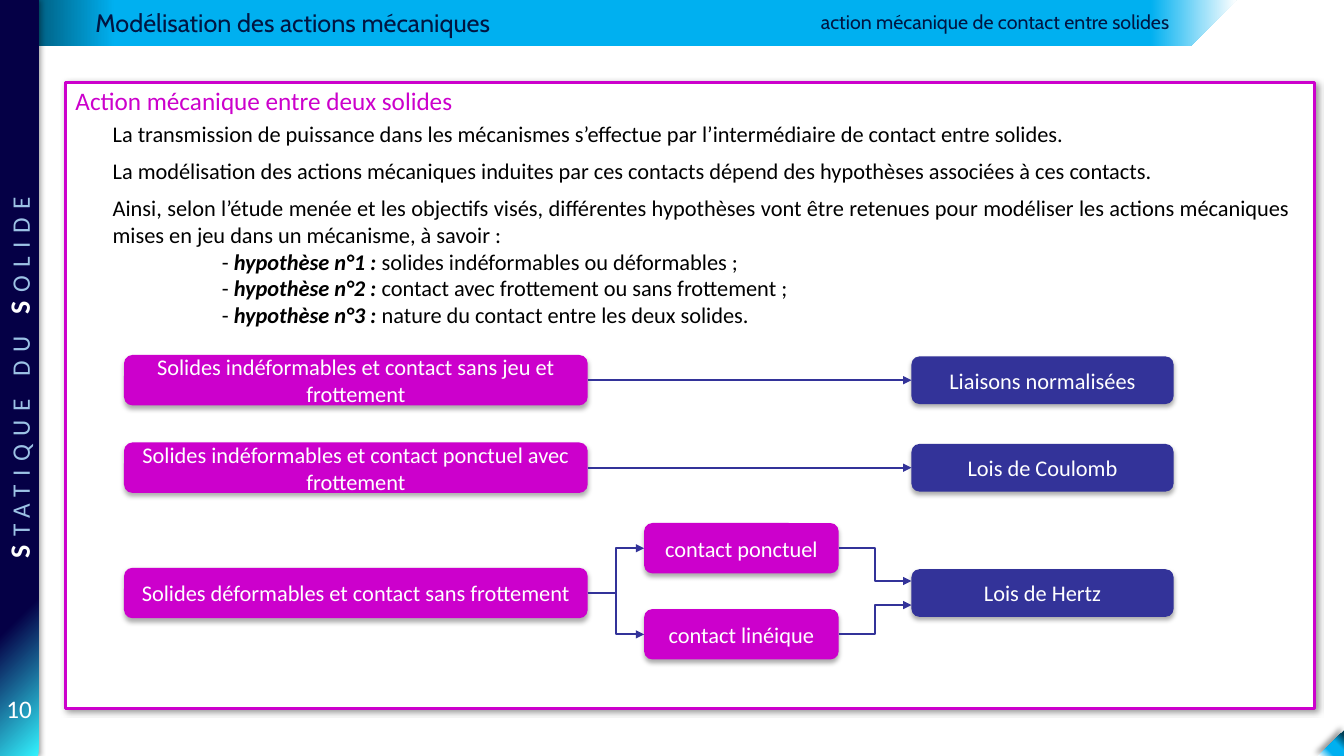
from dataclasses import dataclass

from lxml.etree import SubElement
from pptx import Presentation
from pptx.dml.color import RGBColor
from pptx.enum.shapes import MSO_CONNECTOR as Connector, MSO_SHAPE as Preset
from pptx.enum.text import MSO_ANCHOR as Anchor, PP_ALIGN as Align
from pptx.oxml import parse_xml
from pptx.oxml.ns import nsdecls, qn
from pptx.util import Pt


@dataclass(frozen=True)
class Theme:
    magenta: str = "CC00CC"
    indigo: str = "333399"
    navy: str = "001642"
    pale_blue: str = "9CC2E5"
    white: str = "FFFFFF"
    black: str = "000000"
    banner_stops: tuple = ((0, "003E54"), (9, "00B0F0"), (93, "00B0F0"), (100, "FFFFFF"))
    sidebar_stops: tuple = ((0, "33F3FF"), (20, "050046"))
    corner_stops: tuple = ((10, "003E54"), (40, "00B0F0"), (69, "00B0F0"), (100, "FFFFFF"))
    body_font: str = "Calibri"
    banner_font: str = "Cabin"
    capital: int = 20
    heading: int = 18
    body: int = 16
    subtitle: int = 14


@dataclass(frozen=True)
class Box:
    left: float
    top: float
    width: float
    height: float

    def inner(self, left, top, width, height):
        return Box(self.left + left, self.top + top, width, height)

    def lengths(self):
        return [Pt(value) for value in (self.left, self.top, self.width, self.height)]


THEME = Theme()


def set_gradient(shape, stops, angle):
    shape.fill.background()
    properties = shape.element.spPr
    marks = "".join(f'<a:gs pos="{position * 1000}"><a:srgbClr val="{color}"/></a:gs>'
                    for position, color in stops)
    gradient = parse_xml(f'<a:gradFill {nsdecls("a")} rotWithShape="1"><a:gsLst>{marks}</a:gsLst>'
                         f'<a:lin ang="{angle * 60000}" scaled="0"/></a:gradFill>')
    properties.replace(properties.find(qn("a:noFill")), gradient)


def set_shadow(shape, opacity, blur, distance, angle):
    shape.shadow.inherit = False
    effects = shape.element.spPr.find(qn("a:effectLst"))
    effects.append(parse_xml(
        f'<a:outerShdw {nsdecls("a")} blurRad="{Pt(blur)}" dist="{Pt(distance)}" '
        f'dir="{angle * 60000}" algn="ctr" rotWithShape="0"><a:srgbClr val="{THEME.black}">'
        f'<a:alpha val="{opacity * 1000}"/></a:srgbClr></a:outerShdw>'))


def add_run(paragraph, text, size, color=THEME.black, name=THEME.body_font, bold=False, italic=False):
    run = paragraph.add_run()
    run.text = text
    font = run.font
    font.name, font.size, font.bold, font.italic = name, Pt(size), bold, italic
    font.color.rgb = RGBColor.from_string(color)
    return run


def add_text_box(slide, box, align=Align.LEFT):
    """Add a wrapping text box and return it with its first paragraph."""
    shape = slide.shapes.add_textbox(*box.lengths())
    shape.text_frame.word_wrap = True
    paragraph = shape.text_frame.paragraphs[0]
    paragraph.alignment = align
    return shape, paragraph


def add_polygon(slide, points):
    corners = [(Pt(x), Pt(y)) for x, y in points]
    builder = slide.shapes.build_freeform(*corners[0])
    builder.add_line_segments(corners[1:], close=True)
    shape = builder.convert_to_shape()
    shape.line.fill.background()
    shape.shadow.inherit = False
    return shape


def add_banner(slide, box):
    right, bottom = box.left + box.width, box.top + box.height
    band = add_polygon(slide, [(box.left, box.top), (right, box.top),
                               (right - box.height, bottom), (box.left, bottom)])
    set_gradient(band, THEME.banner_stops, 0)
    _, title = add_text_box(slide, box.inner(58, 1.4, 352, 30))
    add_run(title, "Modélisation des actions mécaniques", THEME.heading, THEME.navy, THEME.banner_font)
    _, subtitle = add_text_box(slide, box.inner(375, 3.6, 464.5, 24.5), Align.RIGHT)
    add_run(subtitle, "action mécanique de contact entre solides", THEME.subtitle,
            THEME.navy, THEME.banner_font)


def add_sidebar(slide, box):
    strip = slide.shapes.add_shape(Preset.RECTANGLE, *box.lengths())
    set_gradient(strip, THEME.sidebar_stops, 225)
    strip.line.fill.background()
    set_shadow(strip, 40, 4, 1, 0)
    depth = 31.7
    label, paragraph = add_text_box(
        slide, box.inner((box.width - box.height) / 2, (box.height - depth) / 2, box.height, depth),
        Align.CENTER)
    label.rotation = 270
    for text, is_capital in (("S", True), ("TATIQUE DU ", False), ("S", True), ("OLIDE", False)):
        run = add_run(paragraph, text, THEME.capital if is_capital else THEME.heading,
                      THEME.white if is_capital else THEME.pale_blue, bold=is_capital)
        run.font._element.set("spc", "600")
    number, paragraph = add_text_box(slide, box.inner(0, 492, box.width, 29), Align.CENTER)
    number.text_frame.margin_left = number.text_frame.margin_right = 0
    add_run(paragraph, "10", THEME.heading, THEME.white)


def add_corner(slide, box):
    right, bottom = box.left + box.width, box.top + box.height
    corner = add_polygon(slide, [(right, box.top), (box.left, bottom), (right, bottom)])
    set_gradient(corner, THEME.corner_stops, 135)
    set_shadow(corner, 40, 4, 3, 225)


def add_panel(slide, box):
    frame = slide.shapes.add_shape(Preset.ROUNDED_RECTANGLE, *box.lengths())
    frame.adjustments[0] = 0
    frame.fill.solid()
    frame.fill.fore_color.rgb = RGBColor.from_string(THEME.white)
    frame.line.color.rgb = RGBColor.from_string(THEME.magenta)
    frame.line.width = Pt(2.25)
    set_shadow(frame, 40, 4, 2, 45)
    _, heading = add_text_box(slide, box.inner(0, -1.4, 403, 29))
    add_run(heading, "Action mécanique entre deux solides", THEME.heading, THEME.magenta)

    body, paragraph = add_text_box(slide, box.inner(26.6, 23, 855.4, 158))
    statements = (
        "La transmission de puissance dans les mécanismes s’effectue par l’intermédiaire de contact entre solides.",
        "La modélisation des actions mécaniques induites par ces contacts dépend des hypothèses associées à ces contacts.",
        "Ainsi, selon l’étude menée et les objectifs visés, différentes hypothèses vont être retenues pour "
        "modéliser les actions mécaniques mises en jeu dans un mécanisme, à savoir :")
    for index, statement in enumerate(statements):
        if index:
            paragraph = body.text_frame.add_paragraph()
            paragraph.space_before = Pt(7.3)
        add_run(paragraph, statement, THEME.body)
    paragraph.alignment = Align.JUSTIFY
    hypotheses = ("solides indéformables ou déformables ;",
                  "contact avec frottement ou sans frottement ;",
                  "nature du contact entre les deux solides.")
    for number, hypothesis in enumerate(hypotheses, 1):
        paragraph = body.text_frame.add_paragraph()
        tabs = SubElement(paragraph._p.get_or_add_pPr(), qn("a:tabLst"))
        SubElement(tabs, qn("a:tab"), pos=str(Pt(78)), algn="l")
        add_run(paragraph, "\t- ", THEME.body)
        add_run(paragraph, f"hypothèse n°{number} : ", THEME.body, bold=True, italic=True)
        add_run(paragraph, hypothesis, THEME.body)


def add_node(slide, preset, box, text, color):
    node = slide.shapes.add_shape(preset, *box.lengths())
    node.fill.solid()
    node.fill.fore_color.rgb = RGBColor.from_string(color)
    node.line.fill.background()
    set_shadow(node, 32, 3.5, 2.2, 90)
    node.text_frame.word_wrap = True
    node.text_frame.vertical_anchor = Anchor.MIDDLE
    paragraph = node.text_frame.paragraphs[0]
    paragraph.alignment = Align.CENTER
    add_run(paragraph, text, THEME.body, THEME.white)
    return node


def add_arrow(slide, kind, source, target, offset=0):
    """Link two nodes; a non-zero offset enters the target's left side off its middle."""
    arrow = slide.shapes.add_connector(
        kind, source.left + source.width, source.top + source.height // 2,
        target.left, target.top + target.height // 2 + Pt(offset))
    arrow.begin_connect(source, 3)
    if not offset:
        arrow.end_connect(target, 1)
    arrow.line.color.rgb = RGBColor.from_string(THEME.indigo)
    arrow.line.width = Pt(1.5)
    properties = arrow.element.spPr
    SubElement(properties.find(qn("a:ln")), qn("a:tailEnd"), type="triangle")
    SubElement(properties, qn("a:effectLst"))


def add_flow(slide, box):
    def add_case(left, middle, width, text):
        return add_node(slide, Preset.FLOWCHART_ALTERNATE_PROCESS,
                        box.inner(left, middle - 18, width, 36), text, THEME.magenta)

    rows = ((18, "Solides indéformables et contact sans jeu et frottement", "Liaisons normalisées"),
            (80.5, "Solides indéformables et contact ponctuel avec frottement", "Lois de Coulomb"),
            (170, "Solides déformables et contact sans frottement", "Lois de Hertz"))
    for middle, case_text, law_text in rows:
        case = add_case(0, middle, 331.2, case_text)
        law = add_node(slide, Preset.ROUNDED_RECTANGLE,
                       box.inner(562.5, middle - 17, 187.2, 34), law_text, THEME.indigo)
        if middle != rows[-1][0]:
            add_arrow(slide, Connector.STRAIGHT, case, law)
    for middle, text, offset in ((138, "contact ponctuel", -8.6), (199.5, "contact linéique", 8.6)):
        contact = add_case(371.5, middle, 139, text)
        add_arrow(slide, Connector.ELBOW, case, contact)
        add_arrow(slide, Connector.ELBOW, contact, law, offset)


def main():
    presentation = Presentation()
    presentation.slide_width, presentation.slide_height = Pt(960), Pt(540)
    slide = presentation.slides.add_slide(presentation.slide_layouts[6])
    add_banner(slide, Box(3, 0, 880.5, 33))
    add_sidebar(slide, Box(0, 0, 27.4, 540))
    add_corner(slide, Box(941.8, 521.8, 18.2, 18.2))
    add_panel(slide, Box(46.8, 59, 892, 447))
    add_flow(slide, Box(88.6, 253.6, 750, 218))
    presentation.save("out.pptx")


if __name__ == "__main__":
    main()
